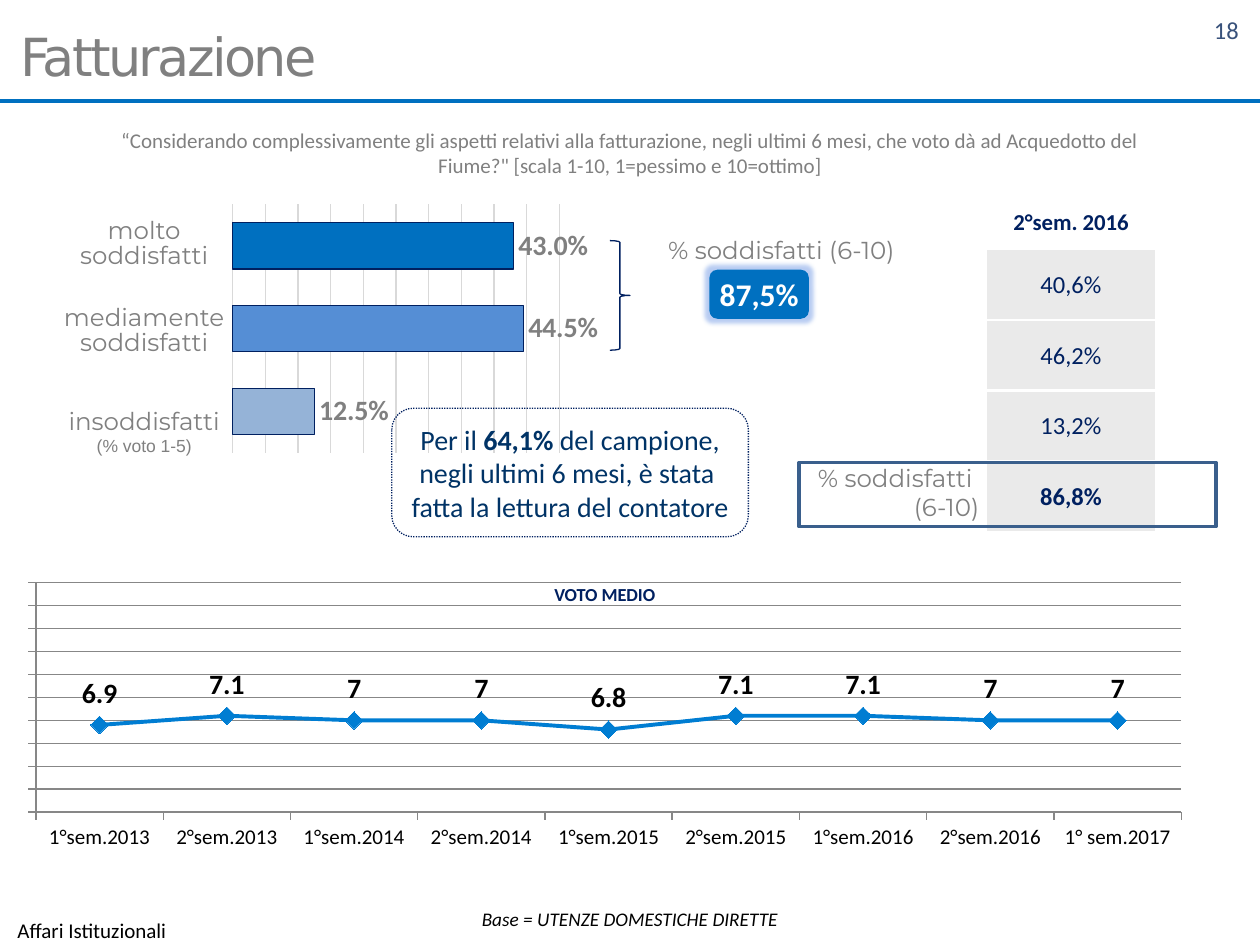
from lxml import etree
from pptx import Presentation
from pptx import util as u
from pptx.chart import data as cd
from pptx.dml import color
from pptx.enum import chart as ch, dml, shapes, text
from pptx.oxml import parse_xml
from pptx.oxml.ns import nsdecls, qn

GREY, NAVY, BLUE, BLACK, WHITE = "808080", "002060", "0070C0", "000000", "FFFFFF"
AXIS = "878787"
LEFT, CENTER, RIGHT = text.PP_ALIGN.LEFT, text.PP_ALIGN.CENTER, text.PP_ALIGN.RIGHT
TOP, MIDDLE = text.MSO_ANCHOR.TOP, text.MSO_ANCHOR.MIDDLE
STANDARD = (0.1, 0.05, 0.1, 0.05)


def rgb(value):
    return color.RGBColor.from_string(value)


def set_font(font, size, hue, name="Calibri", bold=False, italic=False):
    font.size, font.name, font.bold, font.italic = u.Pt(size), name, bold, italic
    font.color.rgb = rgb(hue)


def set_line(line, hue, width, dash=None):
    line.color.rgb = rgb(hue)
    line.width = u.Pt(width)
    if dash:
        line.dash_style = dash


def write(tf, paragraphs, align=LEFT, anchor=TOP, inset=STANDARD, leading=None,
          spacing=None, **style):
    """Fill a frame; a paragraph is a string or a list of (text, overrides)."""
    tf.word_wrap = True
    tf.vertical_anchor = anchor
    tf.margin_left, tf.margin_top, tf.margin_right, tf.margin_bottom = map(u.Inches, inset)
    for i, parts in enumerate(paragraphs):
        p = tf.add_paragraph() if i else tf.paragraphs[0]
        p.alignment = align
        if leading:
            p.line_spacing = u.Pt(leading)
        for words, extra in [(parts, {})] if isinstance(parts, str) else parts:
            r = p.add_run()
            r.text = words
            set_font(r.font, **{**style, **extra})
            if spacing:
                r.font._element.set("spc", str(int(spacing * 100)))


def set_plot_area(chart, x, y, w, h):
    plot = chart._chartSpace.chart.plotArea
    for old in plot.findall(qn("c:layout")):
        plot.remove(old)
    sizes = "".join(f'<c:{k} val="{v}"/>' for k, v in zip("xywh", (x, y, w, h)))
    plot.insert(0, parse_xml(
        f'<c:layout {nsdecls("c")}><c:manualLayout><c:layoutTarget val="inner"/>'
        f'<c:xMode val="edge"/><c:yMode val="edge"/>{sizes}</c:manualLayout></c:layout>'))


class Slide:
    def __init__(self, prs):
        self.s = prs.slides.add_slide(prs.slide_layouts[6])

    def text(self, box, *paragraphs, **style):
        sp = self.s.shapes.add_textbox(*map(u.Inches, box))
        write(sp.text_frame, paragraphs, **style)

    def shape(self, kind, box, *paragraphs, fill=None, line=None, glow=None, **style):
        sp = self.s.shapes.add_shape(kind, *map(u.Inches, box))
        sp.shadow.inherit = False
        if fill:
            sp.fill.solid()
            sp.fill.fore_color.rgb = rgb(fill)
        else:
            sp.fill.background()
        if line:
            set_line(sp.line, *line)
        else:
            sp.line.fill.background()
        if glow:
            effects = sp._element.spPr.find(qn("a:effectLst"))
            effects.append(parse_xml(
                f'<a:glow {nsdecls("a")} rad="63500"><a:srgbClr val="{glow}">'
                '<a:alpha val="40000"/></a:srgbClr></a:glow>'))
        if paragraphs:
            write(sp.text_frame, paragraphs, **style)

    def rule(self, x1, y1, x2, y2, hue, width):
        c = self.s.shapes.add_connector(shapes.MSO_CONNECTOR.STRAIGHT,
                                        *map(u.Inches, (x1, y1, x2, y2)))
        set_line(c.line, hue, width)
        etree.SubElement(c._element.spPr, qn("a:effectLst"))

    def table(self, box, heights, values):
        tbl = self.s.shapes.add_table(len(values), 1, *map(u.Inches, box)).table
        tbl.first_row = tbl.horz_banding = False
        last = len(values) - 1
        for i, (height, value) in enumerate(zip(heights, values)):
            tbl.rows[i].height = u.Inches(height)
            cell = tbl.cell(i, 0)
            write(cell.text_frame, [value], align=CENTER, size=14 if i else 13,
                  hue=NAVY, bold=i in (0, last))
            cell.vertical_anchor = MIDDLE
            cell.margin_left = cell.margin_right = cell.margin_top = u.Inches(0.01)
            cell.margin_bottom = 0
            pr = cell._tc.get_or_add_tcPr()
            for side in "LRTB":
                thick = (i, side) in ((2, "B"), (3, "T"))
                pr.append(parse_xml(
                    f'<a:ln{side} {nsdecls("a")} w="{u.Pt(2.25 if thick else 1)}"><a:solidFill>'
                    f'<a:srgbClr val="{WHITE}"/></a:solidFill></a:ln{side}>'))
            if i:
                cell.fill.solid()
                cell.fill.fore_color.rgb = rgb("EAEAEA")
            else:
                cell.fill.background()

    def chart(self, kind, box, cats, vals, plot_area, step, low, high, grid,
              label_hue, label_format, label_pos):
        data = cd.CategoryChartData()
        data.categories = cats
        data.add_series("Series 1", vals)
        chart = self.s.shapes.add_chart(kind, *map(u.Inches, box), data).chart
        chart.has_title = chart.has_legend = False
        set_font(chart.font, 12, BLACK)
        set_plot_area(chart, *plot_area)
        axis = chart.value_axis
        axis.minimum_scale, axis.maximum_scale, axis.major_unit = low, high, step
        axis.has_major_gridlines = True
        set_line(axis.major_gridlines.format.line, grid, 0.75)
        plot = chart.plots[0]
        plot.vary_by_categories = False
        plot.has_data_labels = True
        labels = plot.data_labels
        labels.show_value = True
        labels.number_format, labels.number_format_is_linked = label_format, False
        labels.position = label_pos
        set_font(labels.font, 16, label_hue, bold=True)
        return chart

    def satisfaction_bars(self, box, vals, hues):
        chart = self.chart(ch.XL_CHART_TYPE.BAR_CLUSTERED, box, ["1", "2", "3"], vals,
                           (0.046, 0.067, 0.765, 0.866), 0.05, 0, 0.5, "D9D9D9",
                           GREY, "0.0%", ch.XL_LABEL_POSITION.OUTSIDE_END)
        chart.category_axis.reverse_order = True
        chart.category_axis.visible = chart.value_axis.visible = False
        chart.plots[0].gap_width = 80
        for i, hue in enumerate(hues):
            fmt = chart.series[0].points[i].format
            fmt.fill.solid()
            fmt.fill.fore_color.rgb = rgb(hue)
            set_line(fmt.line, NAVY, 0.75)

    def score_line(self, box, cats, vals, hue):
        chart = self.chart(ch.XL_CHART_TYPE.LINE_MARKERS, box, cats, vals,
                           (0.042, 0, 0.942, 0.661), 0.5, 5, 10, AXIS,
                           BLACK, "General", ch.XL_LABEL_POSITION.ABOVE)
        chart.value_axis.tick_label_position = ch.XL_TICK_LABEL_POSITION.NONE
        for axis in (chart.category_axis, chart.value_axis):
            axis.major_tick_mark = ch.XL_TICK_MARK.OUTSIDE
            set_line(axis.format.line, AXIS, 0.75)
        ser = chart.series[0]
        ser.smooth = False
        set_line(ser.format.line, hue, 2.25)
        ser.marker.style, ser.marker.size = ch.XL_MARKER_STYLE.DIAMOND, 10
        ser.marker.format.fill.solid()
        ser.marker.format.fill.fore_color.rgb = rgb(hue)
        set_line(ser.marker.format.line, hue, 0.75)


def main():
    prs = Presentation()
    prs.slide_width, prs.slide_height = u.Inches(10), u.Inches(7.5)
    s = Slide(prs)
    shape = shapes.MSO_SHAPE
    label = dict(size=14, hue=GREY, name="Montserrat")
    flat = (0.1, 0, 0.1, 0)

    # Header and footer
    s.rule(-0.01, 0.8, 10.03, 0.8, BLUE, 2)
    s.text((7.6, 0.07, 2.33, 0.4), "18", align=RIGHT, size=14, hue="39527B")
    s.text((0.04, 7.23, 3.15, 0.3), "Affari Istituzionali", anchor=MIDDLE, size=12, hue=BLACK)
    s.text((0, 0.13, 9.72, 0.63), "Fatturazione", anchor=MIDDLE,
           inset=(0.16, 0.05, 0.1, 0.05), size=30, hue=GREY, name="DejaVu Sans", spacing=-1.5)

    # Satisfaction bars with their labels
    s.text((0.28, 3.17, 1.73, 0.51), "insoddisfatti",
           [("(% voto 1-5)", dict(size=10, name="Arial"))], align=CENTER, **label)
    for top, words in ((1.7, "molto soddisfatti"), (2.39, "mediamente soddisfatti")):
        s.text((0.28, top, 1.73, 0.61), words, align=CENTER, leading=14, **label)
    s.shape(shape.ROUNDED_RECTANGLE, (5.63, 2.14, 0.79, 0.39), "87,5%", fill=BLUE,
            glow="4F81E0", align=CENTER, anchor=MIDDLE, inset=(0,) * 4, size=18,
            hue=WHITE, bold=True)
    s.satisfaction_bars((1.69, 1.47, 3.39, 2.28), (0.43, 0.445, 0.125),
                        (BLUE, "558ED5", "95B3D7"))
    s.shape(shape.RIGHT_BRACE, (4.84, 1.91, 0.16, 0.87), line=(NAVY, 0.75))
    s.text((4.8, 1.83, 2.4, 0.31), "% soddisfatti (6-10)", align=RIGHT, anchor=MIDDLE,
           inset=flat, **label)

    # Previous half-year
    s.table((7.83, 1.55, 1.34, 2.68), [0.43] + [0.56] * 4,
            ["2°sem. 2016", "40,6%", "46,2%", "13,2%", "86,8%"])
    s.text((5.47, 3.75, 2.4, 0.31), "% soddisfatti ", "(6-10)", align=RIGHT,
           anchor=MIDDLE, inset=flat, **label)
    s.shape(shape.RECTANGLE, (6.34, 3.67, 3.31, 0.51), line=("3A5F8C", 2))

    # Question, base and meter-reading note
    s.text((0.59, 0.96, 8.82, 0.5),
           "“Considerando complessivamente gli aspetti relativi alla fatturazione, negli ultimi "
           "6 mesi, che voto dà ad Acquedotto del Fiume?\" [scala 1-10, 1=pessimo e 10=ottimo]",
           align=CENTER, size=12, hue=GREY)
    s.shape(shape.ROUNDED_RECTANGLE, (3.11, 3.24, 2.83, 1.02),
            [("Per il ", {}), ("64,1%", dict(bold=True)), (" del campione,", {})],
            "negli ultimi 6 mesi, è stata ", "fatta la lettura del contatore",
            line=(NAVY, 0.75, dml.MSO_LINE.ROUND_DOT), align=CENTER, anchor=MIDDLE,
            inset=(0.04,) * 4, size=16, hue="003366")

    # Average score over time
    cats = [f"{half}°sem.{year}" for year in range(2013, 2017) for half in (1, 2)]
    s.score_line((-0.12, 4.62, 9.65, 2.76), cats + ["1° sem.2017"],
                 (6.9, 7.1, 7, 7, 6.8, 7.1, 7.1, 7, 7), "007DD2")
    s.text((3.7, 4.6, 2.2, 0.26), "VOTO MEDIO", align=CENTER, leading=11, size=10.5,
           hue=NAVY, bold=True)
    s.shape(shape.ROUNDED_RECTANGLE, (3.76, 7.15, 2.48, 0.29),
            "Base = UTENZE DOMESTICHE DIRETTE", fill=WHITE, align=CENTER, anchor=MIDDLE,
            inset=(0,) * 4, size=11, hue=BLACK, italic=True)
    prs.save("out.pptx")


if __name__ == "__main__":
    main()
